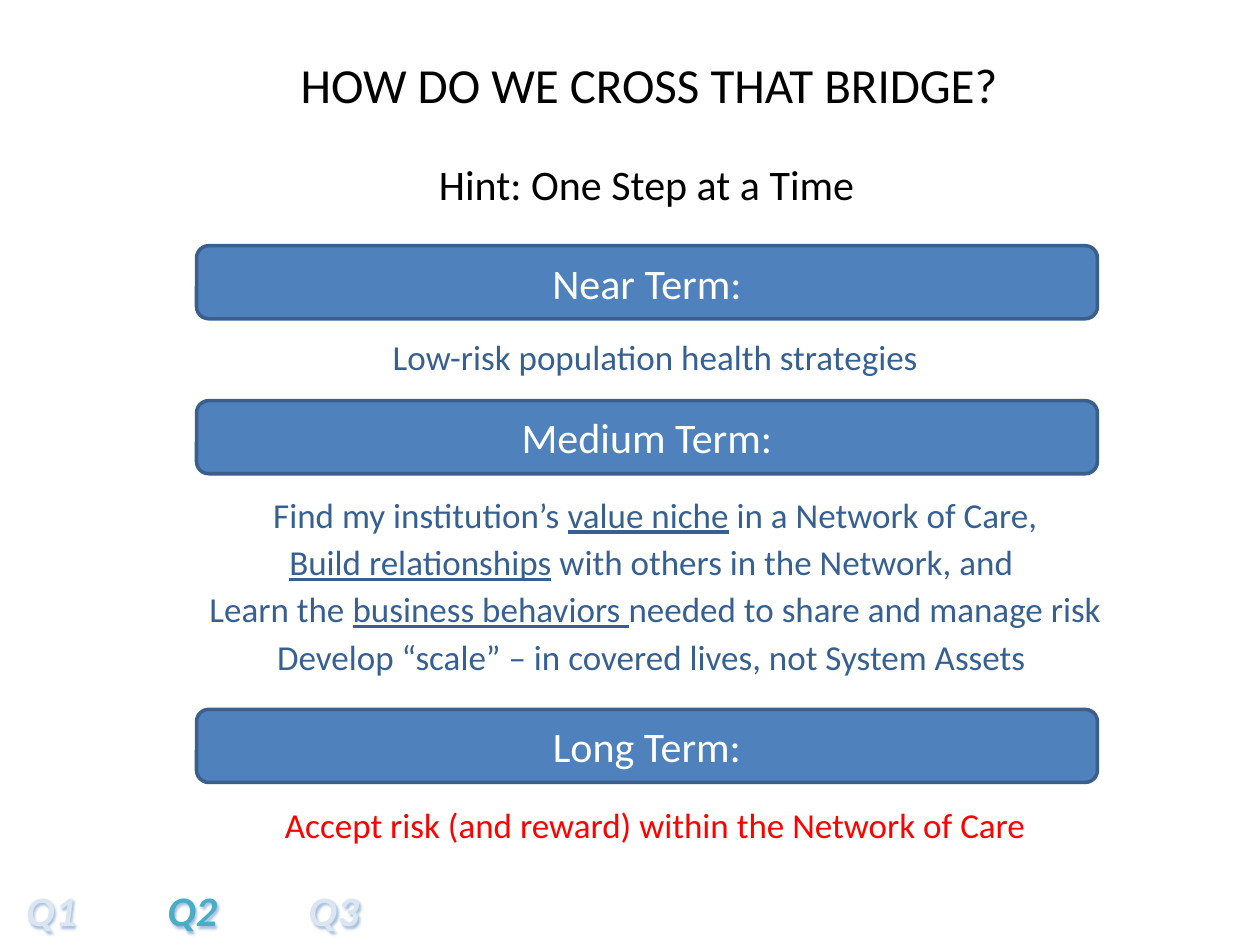
"""Build the slide of near, medium and long term steps."""
import dataclasses

import lxml.etree
import pptx
import pptx.dml.color
import pptx.enum.shapes
import pptx.enum.text
import pptx.oxml.ns
import pptx.util

WIDTH, HEIGHT = 10, 7.5
FONT = "Calibri"
WHITE, BLACK, RED = "FFFFFF", "000000", "FF0000"
BLUE, EDGE, TEXT_BLUE, TEAL, PALE = "4F81BD", "3A5F8C", "376092", "4BACC6", "DCE6F2"
CENTER = pptx.enum.text.PP_ALIGN.CENTER
LEFT = pptx.enum.text.PP_ALIGN.LEFT
TAB_STEP = 0.56


@dataclasses.dataclass
class Span:
    """A stretch of text in one style."""
    text: str
    color: str = TEXT_BLUE
    underline: bool = False
    outline: str = ""


@dataclasses.dataclass
class Line:
    """A paragraph and the space before it in points."""
    spans: list[Span]
    before: float = 0


@dataclasses.dataclass
class Block:
    """A text box placed in inches."""
    left: float
    top: float
    width: float
    height: float
    size: float
    lines: list[Line]
    align: pptx.enum.text.PP_ALIGN = CENTER
    inset: float = 0.1
    shadow: bool = False


@dataclasses.dataclass
class Bar:
    """A heading bar for one term."""
    label: str
    top: float


BARS = [Bar("Near Term:", 1.95), Bar("Medium Term:", 3.18), Bar("Long Term:", 5.63)]

BLOCKS = [
    Block(0.33, 2.61, 9.62, 4.3, 20, [
        Line([Span("Low-risk population health strategies")]),
        Line([Span("Find my institution’s "), Span("value niche", underline=True),
              Span(" in a Network of Care,")], 66.5),
        Line([Span("Build relationships", underline=True),
              Span(" with others in the Network, and ")], 3),
        Line([Span("Learn the "), Span("business behaviors ", underline=True),
              Span("needed to share and manage risk")], 3),
        Line([Span("Develop “scale” – in covered lives, not System Assets ")], 3),
        Line([Span("Accept risk (and reward) within the Network of Care", RED)], 72),
    ], inset=0.22),
    Block(0.6, 1.21, 9.14, 0.5, 24, [Line([Span("Hint: One Step at a Time ", BLACK)])]),
    Block(0.46, 0.38, 9.38, 0.57, 28, [Line([Span("HOW DO WE CROSS THAT BRIDGE?", BLACK)])]),
    Block(0.11, 6.97, 6.46, 0.5, 24, [
        Line([Span("Q1\t\t", PALE, outline=BLUE), Span("Q2", TEAL, outline=WHITE),
              Span("\t\tQ3", PALE, outline=BLUE)]),
    ], LEFT, shadow=True),
]


def rgb(color: str) -> pptx.dml.color.RGBColor:
    """Turn a hex string into a colour."""
    return pptx.dml.color.RGBColor.from_string(color)


def add_node(parent, tag: str, **attributes: str):
    """Append a drawing element to its parent."""
    return lxml.etree.SubElement(parent, pptx.oxml.ns.qn(tag), attributes)


def style_run(run, span: Span, size: float) -> None:
    """Give a run its font, size and colour."""
    run.font.size = pptx.util.Pt(size)
    run.font.color.rgb = rgb(span.color)
    run.font.underline = span.underline or None
    if span.outline:
        decorate_run(run, span)
    run.font.name = FONT


def decorate_run(run, span: Span) -> None:
    """Make a run bold italic with an outline."""
    run.font.bold = run.font.italic = True
    properties = run.font._element
    if span.color == PALE:
        properties.set("spc", "50")
    outline = add_node(properties, "a:ln", w=str(pptx.util.Pt(0.75)))
    add_node(add_node(outline, "a:solidFill"), "a:srgbClr", val=span.outline)
    properties.insert(0, outline)


def add_shadow(box) -> None:
    """Give the text of an unfilled box a soft shadow."""
    effects = add_node(box._element.spPr, "a:effectLst")
    shadow = add_node(effects, "a:outerShdw", blurRad="19050", dist="19050", dir="2700000")
    add_node(add_node(shadow, "a:srgbClr", val=BLUE), "a:alpha", val="50000")


def add_tabs(para, count: int) -> None:
    """Set evenly spaced tab stops."""
    stops = add_node(para._p.get_or_add_pPr(), "a:tabLst")
    for step in range(1, count + 1):
        add_node(stops, "a:tab", pos=str(pptx.util.Inches(step * TAB_STEP)), algn="l")


def add_block(page, block: Block) -> None:
    """Draw a text box with its lines."""
    box = page.shapes.add_textbox(*map(
        pptx.util.Inches, (block.left, block.top, block.width, block.height)))
    if block.shadow:
        add_shadow(box)
    frame = box.text_frame
    frame.word_wrap = True
    frame.margin_left = pptx.util.Inches(block.inset)
    for index, line in enumerate(block.lines):
        para = frame.add_paragraph() if index else frame.paragraphs[0]
        para.alignment = block.align
        para.space_before = pptx.util.Pt(line.before)
        if block.align == LEFT:
            add_tabs(para, 4)
        for span in line.spans:
            run = para.add_run()
            run.text = span.text
            style_run(run, span, block.size)


def add_bar(page, bar: Bar) -> None:
    """Draw a rounded heading bar."""
    shape = page.shapes.add_shape(
        pptx.enum.shapes.MSO_SHAPE.ROUNDED_RECTANGLE,
        *map(pptx.util.Inches, (1.56, bar.top, 7.15, 0.58)))
    shape.shadow.inherit = False
    shape.fill.solid()
    shape.fill.fore_color.rgb = rgb(BLUE)
    shape.line.color.rgb = rgb(EDGE)
    shape.line.width = pptx.util.Pt(2)
    frame = shape.text_frame
    frame.text = bar.label
    frame.vertical_anchor = pptx.enum.text.MSO_ANCHOR.MIDDLE
    frame.paragraphs[0].alignment = CENTER
    style_run(frame.paragraphs[0].runs[0], Span(bar.label, WHITE), 24)


def main() -> None:
    """Build and save the deck."""
    deck = pptx.Presentation()
    deck.slide_width = pptx.util.Inches(WIDTH)
    deck.slide_height = pptx.util.Inches(HEIGHT)
    page = deck.slides.add_slide(deck.slide_layouts[6])
    for block in BLOCKS:
        add_block(page, block)
    for bar in BARS:
        add_bar(page, bar)
    deck.save("out.pptx")


if __name__ == "__main__":
    main()
